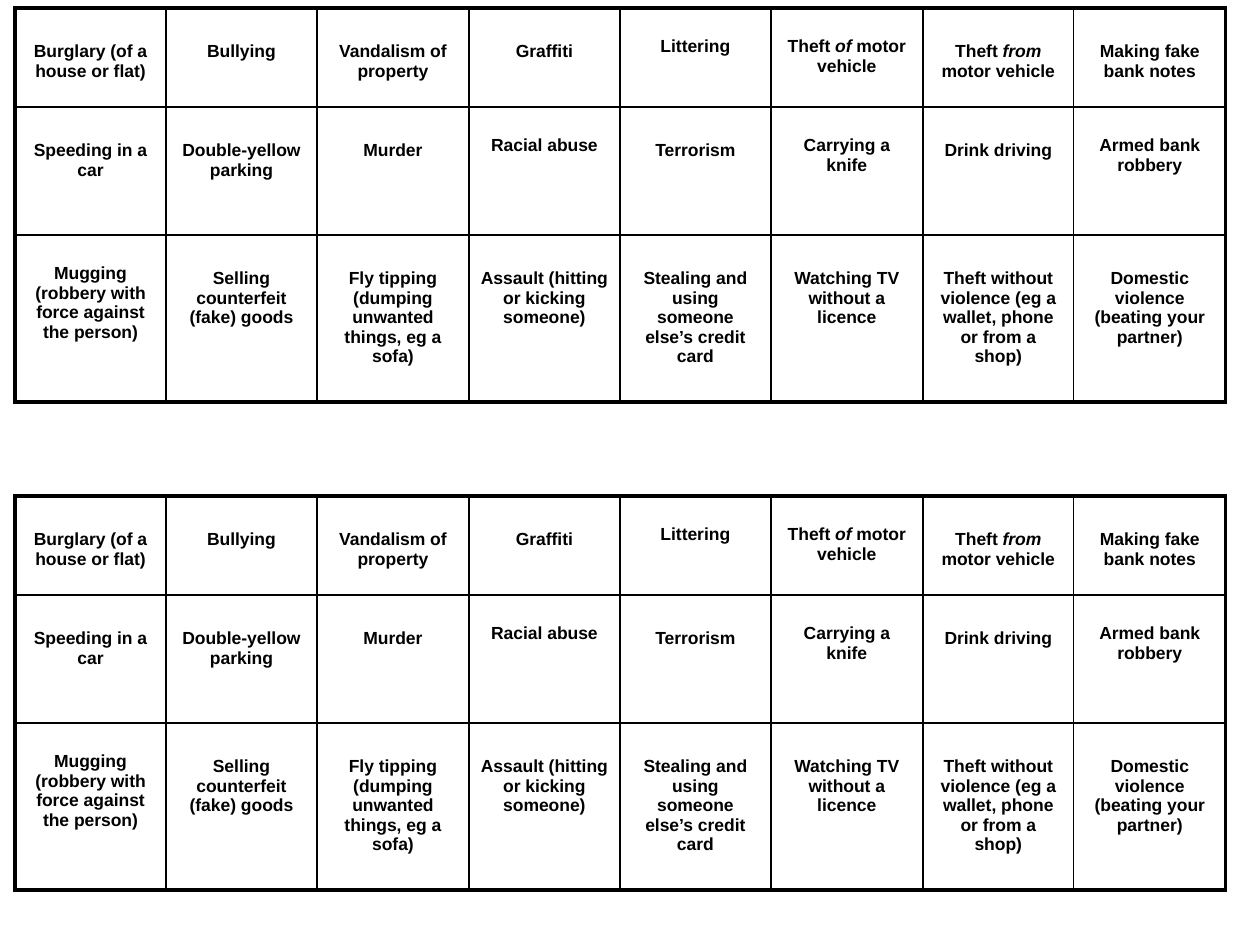
from dataclasses import dataclass

from lxml.etree import SubElement as Sub
from pptx import Presentation
from pptx.dml.color import RGBColor
from pptx.enum.text import MSO_ANCHOR as Anchor, PP_ALIGN as Align
from pptx.oxml.ns import qn
from pptx.util import Emu, Pt

PX = 914400 // 126


@dataclass(frozen=True)
class Theme:
    ink: str = "000000"
    font: str = "Arial"
    size: int = 10
    thin: float = 1
    thick: float = 2.25


@dataclass(frozen=True)
class Crime:
    text: str  # words between asterisks are italic
    drop: int = 34  # space above the text, in px


@dataclass(frozen=True)
class Grid:
    left: int
    top: int
    width: int
    rows: tuple[int, ...]


THEME = Theme()
HIGH = 29

# Wording of the cards, row by row
CRIMES = [
    [
        Crime("Burglary (of a house or flat)"),
        Crime("Bullying"),
        Crime("Vandalism of property"),
        Crime("Graffiti"),
        Crime("Littering", HIGH),
        Crime("Theft *of *motor vehicle", HIGH),
        Crime("Theft *from *motor vehicle"),
        Crime("Making fake bank notes"),
    ],
    [
        Crime("Speeding in a car"),
        Crime("Double-yellow parking"),
        Crime("Murder"),
        Crime("Racial abuse", HIGH),
        Crime("Terrorism"),
        Crime("Carrying a knife", HIGH),
        Crime("Drink driving"),
        Crime("Armed bank robbery", HIGH),
    ],
    [
        Crime("Mugging (robbery with force against the person)", HIGH),
        Crime("Selling counterfeit (fake) goods"),
        Crime("Fly tipping (dumping unwanted things, eg a sofa)"),
        Crime("Assault (hitting or kicking someone)"),
        Crime("Stealing and using someone else’s credit card"),
        Crime("Watching TV without a licence"),
        Crime("Theft without violence (eg a wallet, phone or from a shop)"),
        Crime("Domestic violence (beating your partner)"),
    ],
]

ROWS = (99, 128, 167)
GRIDS = [Grid(15, 8, 1211, ROWS), Grid(15, 496, 1211, ROWS)]


def px(val: int) -> Emu:
    return Emu(val * PX)


def write(frame, text: str, *, size: int = THEME.size, bold: bool = True,
          ink: str = THEME.ink, align=Align.CENTER) -> None:
    """Write text into a frame, with every second part in italics."""
    para = frame.paragraphs[0]
    para.alignment = align
    for num, part in enumerate(text.split("*")):
        run = para.add_run()
        run.text = part
        font = run.font
        font.name, font.size, font.bold = THEME.font, Pt(size), bold
        font.italic = num % 2 == 1
        font.color.rgb = RGBColor.from_string(ink)


def edge(cell, side: str, width: float) -> None:
    line = Sub(cell._tc.get_or_add_tcPr(), qn(f"a:ln{side}"), w=str(Pt(width)))
    Sub(Sub(line, qn("a:solidFill")), qn("a:srgbClr"), val=THEME.ink)


def draw_card(cell, crime: Crime, outer: dict[str, bool]) -> None:
    cell.vertical_anchor = Anchor.TOP
    cell.margin_left = cell.margin_right = px(12)
    cell.margin_top, cell.margin_bottom = px(crime.drop), px(6)
    write(cell.text_frame, crime.text)
    for side, rim in outer.items():
        edge(cell, side, THEME.thick if rim else THEME.thin)
    cell.fill.background()


def draw_grid(slide, grid: Grid, crimes: list[list[Crime]]) -> None:
    high, wide = len(crimes), len(crimes[0])
    table = slide.shapes.add_table(
        high, wide, px(grid.left), px(grid.top), px(grid.width), px(sum(grid.rows))
    ).table
    table.first_row = table.horz_banding = False
    for c, col in enumerate(table.columns):
        col.width = px(grid.width * (c + 1) // wide - grid.width * c // wide)
    for r, line in enumerate(crimes):
        table.rows[r].height = px(grid.rows[r])
        for c, crime in enumerate(line):
            outer = {"L": c == 0, "R": c == wide - 1, "T": r == 0, "B": r == high - 1}
            draw_card(table.cell(r, c), crime, outer)


def main() -> None:
    deck = Presentation()
    deck.slide_width, deck.slide_height = px(1260), px(945)
    slide = deck.slides.add_slide(deck.slide_layouts[6])
    # The same set of cards twice, one above the other
    for grid in GRIDS:
        draw_grid(slide, grid, CRIMES)
    deck.save("out.pptx")


if __name__ == "__main__":
    main()
